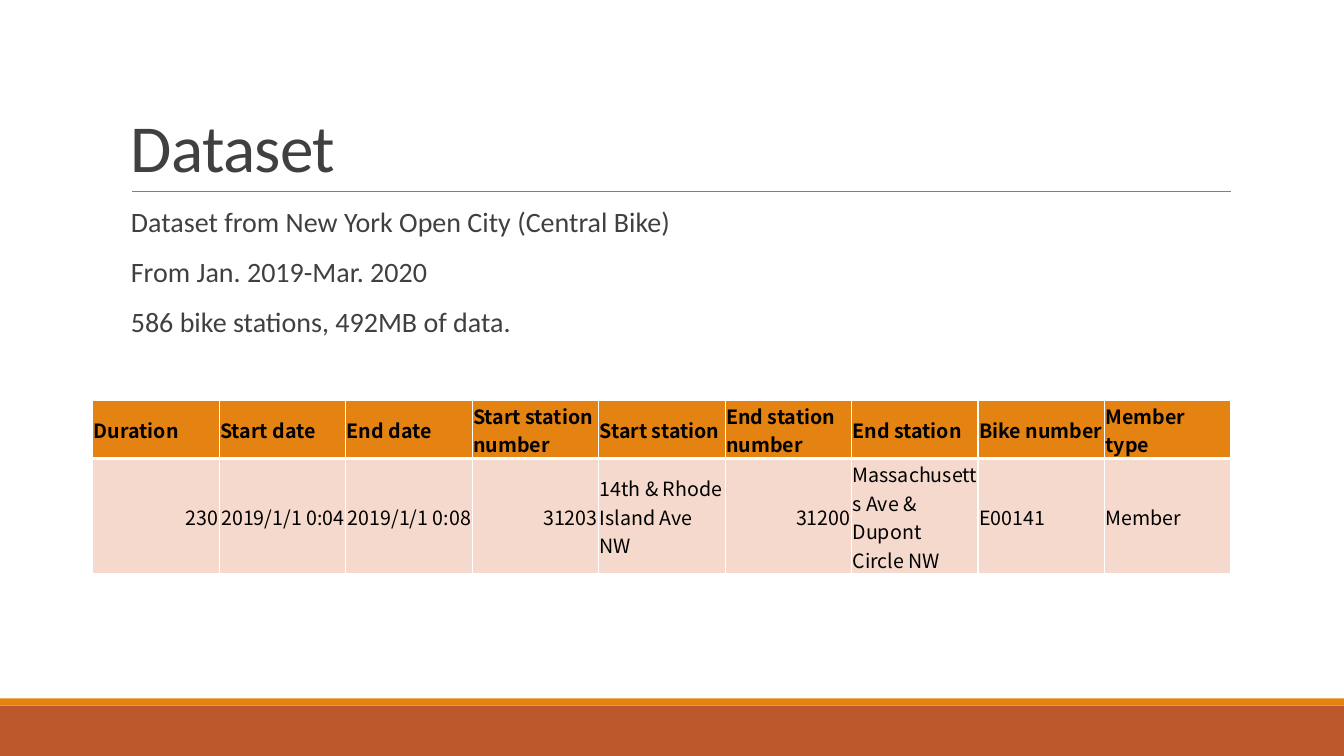
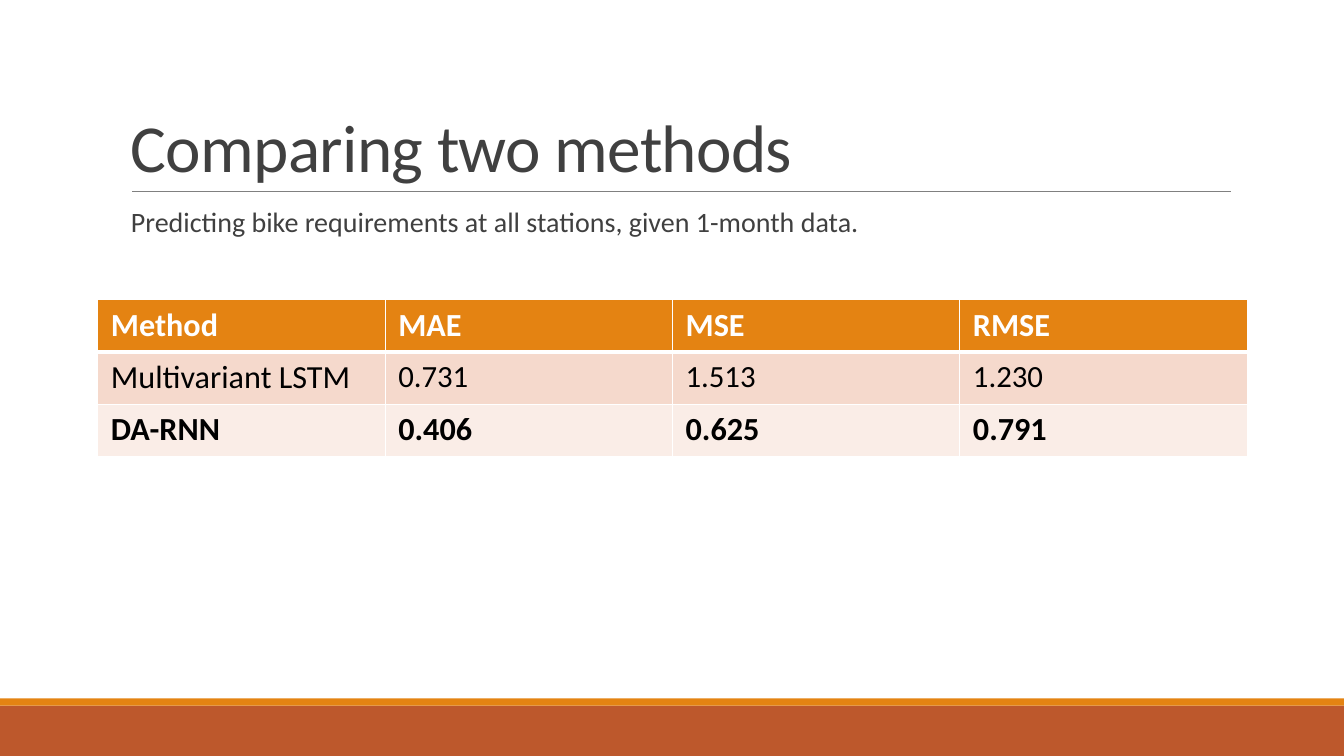
"""Build two slides on bike sharing data: the dataset and a method comparison."""
from dataclasses import dataclass

from lxml.etree import SubElement
from pptx import Presentation
from pptx.dml.color import RGBColor
from pptx.enum.shapes import MSO_CONNECTOR as Connector, MSO_SHAPE as Preset
from pptx.enum.text import MSO_ANCHOR as Anchor, PP_ALIGN as Align
from pptx.oxml.ns import qn
from pptx.slide import Slide
from pptx.table import _Cell as Cell
from pptx.text.text import Font
from pptx.util import Inches, Pt

WHITE = RGBColor(0xFF, 0xFF, 0xFF)
BLACK = RGBColor(0x00, 0x00, 0x00)
INK = RGBColor(0x40, 0x40, 0x40)
RULE = RGBColor(0x80, 0x80, 0x80)
ORANGE = RGBColor(0xE4, 0x83, 0x12)
RUST = RGBColor(0xBD, 0x58, 0x2C)
PEACH = RGBColor(0xF5, 0xD9, 0xCC)
PALE = RGBColor(0xFA, 0xED, 0xE7)

BODY_FONT = "Calibri"
DATA_FONT = "Noto Sans CJK SC"
SLIDE_WIDTH = 13.33
SLIDE_HEIGHT = 7.5
THIN, THICK = 1, 3


@dataclass(frozen=True)
class Band:
    """A full-width footer band."""
    top: float
    height: float
    color: RGBColor


@dataclass(frozen=True)
class Row:
    """One table row; value_size applies after the first column."""
    texts: tuple[str, ...]
    height: float
    fill: RGBColor
    size: float
    value_size: float
    color: RGBColor = BLACK
    bold: bool = False
    right_columns: tuple[int, ...] = ()


@dataclass(frozen=True)
class Grid:
    """A table with equal columns; margins run left, top, right, bottom."""
    left: float
    top: float
    width: float
    font: str
    anchor: Anchor
    margins: tuple[float, float, float, float]
    rows: tuple[Row, ...]


@dataclass(frozen=True)
class Page:
    """The content of one slide."""
    title: str
    lines: tuple[str, ...]
    grid: Grid


BANDS = (Band(7, 0.5, RUST), Band(6.93, 0.07, ORANGE))

PAGES = (
    Page(
        "Dataset",
        (
            "Dataset from New York Open City (Central Bike)",
            "From Jan. 2019-Mar. 2020",
            "586 bike stations, 492MB of data.",
        ),
        Grid(0.92, 3.97, 11.29, DATA_FONT, Anchor.MIDDLE, (0.01, 0.01, 0.01, 0), (
            Row(("Duration", "Start date", "End date", "Start station number",
                 "Start station", "End station number", "End station",
                 "Bike number", "Member type"),
                0.58, ORANGE, 14, 14, bold=True),
            Row(("230", "2019/1/1 0:04", "2019/1/1 0:08", "31203",
                 "14th & Rhode Island Ave NW", "31200",
                 "Massachusetts Ave & Dupont Circle NW", "E00141", "Member"),
                1.14, PEACH, 14, 14, right_columns=(0, 1, 2, 3, 5)),
        )),
    ),
    Page(
        "Comparing two methods",
        ("Predicting bike requirements at all stations, given 1-month data.",),
        Grid(0.97, 2.97, 11.4, BODY_FONT, Anchor.TOP, (0.13, 0.06, 0.13, 0.06), (
            Row(("Method", "MAE", "MSE", "RMSE"), 0.52, ORANGE, 23, 23, WHITE, True),
            Row(("Multivariant LSTM", "0.731", "1.513", "1.230"), 0.52, PEACH, 23, 22),
            Row(("DA-RNN", "0.406", "0.625", "0.791"), 0.52, PALE, 23, 23, bold=True),
        )),
    ),
)


def style_font(font: Font, name: str, size: float, color: RGBColor, bold: bool = False) -> None:
    """Set face, size, colour and weight."""
    font.name = name
    font.size = Pt(size)
    font.color.rgb = color
    font.bold = bold


def draw_frame(slide: Slide) -> None:
    """Draw the footer bands and the rule under the title."""
    for band in BANDS:
        bar = slide.shapes.add_shape(Preset.RECTANGLE, 0, Inches(band.top),
                                     Inches(SLIDE_WIDTH), Inches(band.height))
        bar.shadow.inherit = False
        bar.fill.solid()
        bar.fill.fore_color.rgb = band.color
        bar.line.fill.background()
    rule = slide.shapes.add_connector(Connector.STRAIGHT, Inches(1.31), Inches(1.9),
                                      Inches(12.21), Inches(1.9))
    rule.line.color.rgb = RULE
    rule.line.width = Pt(0.5)
    SubElement(rule._element.spPr, qn("a:effectLst"))


def draw_title(slide: Slide, title: str) -> None:
    """Write the title, resting on the rule."""
    frame = slide.shapes.add_textbox(Inches(1.2), Inches(0.31),
                                     Inches(11), Inches(1.59)).text_frame
    frame.word_wrap = True
    frame.vertical_anchor = Anchor.BOTTOM
    heading = frame.paragraphs[0]
    heading.text = title
    heading.line_spacing = 0.85
    style_font(heading.font, BODY_FONT, 48, INK)
    heading.runs[0]._r.get_or_add_rPr().set("spc", "-50")


def draw_lines(slide: Slide, lines: tuple[str, ...]) -> None:
    """Write the body lines below the rule."""
    frame = slide.shapes.add_textbox(Inches(1.2), Inches(2.02),
                                     Inches(11), Inches(4.4)).text_frame
    frame.word_wrap = True
    frame.margin_right = 0
    frame.text = "\n".join(lines)
    for line in frame.paragraphs:
        line.line_spacing = 0.9
        line.space_before = Pt(12)
        line.space_after = Pt(2)
        style_font(line.font, BODY_FONT, 20, INK)


def draw_borders(cell: Cell, top: float, bottom: float) -> None:
    """Give a cell white borders."""
    properties = cell._tc.get_or_add_tcPr()
    for side, width in (("L", THIN), ("R", THIN), ("T", top), ("B", bottom)):
        border = SubElement(properties, qn(f"a:ln{side}"), w=str(Pt(width)))
        fill = SubElement(border, qn("a:solidFill"))
        SubElement(fill, qn("a:srgbClr"), val=str(WHITE))


def draw_grid(slide: Slide, grid: Grid) -> None:
    """Draw a table with a thick line under its header."""
    column_count = len(grid.rows[0].texts)
    height = sum(row.height for row in grid.rows)
    table = slide.shapes.add_table(len(grid.rows), column_count, Inches(grid.left),
                                   Inches(grid.top), Inches(grid.width),
                                   Inches(height)).table
    table.horz_banding = False
    for r, row in enumerate(grid.rows):
        table.rows[r].height = Inches(row.height)
        for c, text in enumerate(row.texts):
            cell = table.cell(r, c)
            draw_borders(cell, THICK if r == 1 else THIN, THICK if r == 0 else THIN)
            cell.fill.solid()
            cell.fill.fore_color.rgb = row.fill
            cell.vertical_anchor = grid.anchor
            (cell.margin_left, cell.margin_top,
             cell.margin_right, cell.margin_bottom) = map(Inches, grid.margins)
            entry = cell.text_frame.paragraphs[0]
            entry.text = text
            entry.alignment = Align.RIGHT if c in row.right_columns else Align.LEFT
            style_font(entry.font, grid.font, row.value_size if c else row.size,
                       row.color, row.bold)


def main() -> None:
    """Build and save the presentation."""
    deck = Presentation()
    deck.slide_width = Inches(SLIDE_WIDTH)
    deck.slide_height = Inches(SLIDE_HEIGHT)
    for page in PAGES:
        slide = deck.slides.add_slide(deck.slide_layouts[6])
        draw_frame(slide)
        draw_title(slide, page.title)
        draw_lines(slide, page.lines)
        draw_grid(slide, page.grid)
    deck.save("out.pptx")


if __name__ == "__main__":
    main()
